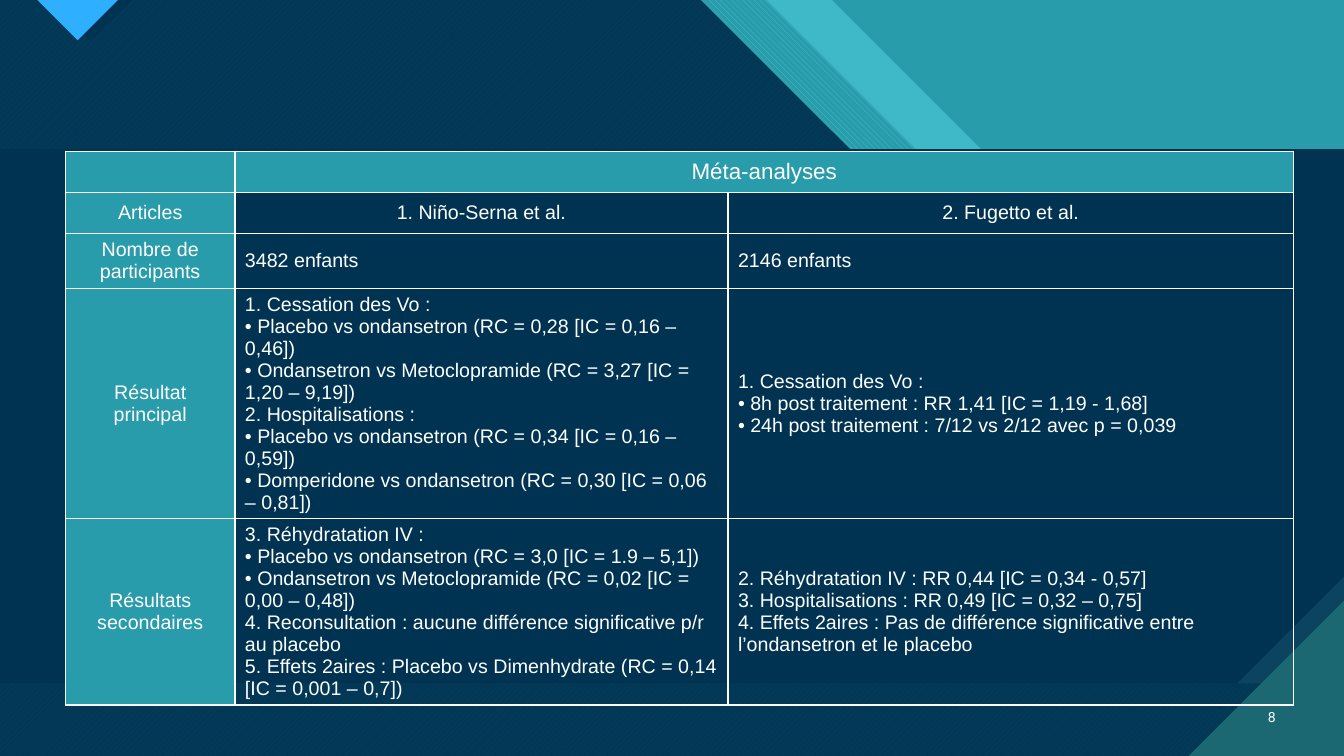
from dataclasses import dataclass

import lxml.etree
import pptx
import pptx.dml.color
import pptx.dml.fill
import pptx.enum.dml
import pptx.enum.shapes
import pptx.enum.text
import pptx.oxml.ns
import pptx.shapes.base
import pptx.slide
import pptx.table
import pptx.text.text
import pptx.util
from pptx.util import Inches

TEAL, AQUA, NAVY, WHITE = "299CAB", "47C3D3", "003352", "FFFFFF"
DEEP_TEAL, BAND_BLUE, BRIGHT_BLUE = "1B6872", "0C4360", "2FAFFF"
WIDTH, HEIGHT = 13.33, 7.5
BAND_TOP, BAND_HEIGHT = 1.48, 5.3

Pattern = pptx.enum.dml.MSO_PATTERN
Align = pptx.enum.text.PP_ALIGN
MIDDLE = pptx.enum.text.MSO_ANCHOR.MIDDLE


@dataclass
class Panel:
    points: list[tuple[float, float]]
    color: str
    back: str = ""
    pattern: Pattern | None = None
    opacity: int = 100


@dataclass
class Row:
    height: float
    label: str
    cells: list[list[str]]
    align: Align = Align.LEFT


def diagonal_outline(top: float, shelf: float, edge: float) -> list[tuple[float, float]]:
    """Outline left of a 45-degree cut that starts at top, rests on a shelf and meets the right edge."""
    step = 2.97
    return [(0, 0), (top, 0), (top + step, step), (shelf, step),
            (WIDTH, edge), (WIDTH, HEIGHT), (0, HEIGHT)]


NAVY_OUTLINE = diagonal_outline(6.95, 11.18, 5.12)
BACKDROP = [
    Panel(diagonal_outline(8.25, 12.34, 3.96), AQUA, opacity=74),
    Panel(diagonal_outline(7.6, 11.84, 4.47), AQUA, TEAL, Pattern.WIDE_DOWNWARD_DIAGONAL),
    Panel(NAVY_OUTLINE, AQUA, DEEP_TEAL, Pattern.WIDE_UPWARD_DIAGONAL),
    Panel(NAVY_OUTLINE, NAVY, opacity=90),
    Panel([(0.48, 0), (0.9, 0.41), (1.31, 0)], NAVY),
    Panel([(0.37, 0), (0.77, 0.4), (1.17, 0)], BRIGHT_BLUE),
]
CORNER = Panel([(11.79, HEIGHT), (WIDTH, HEIGHT), (WIDTH, 5.96)], DEEP_TEAL)

COLUMN_WIDTHS = [1.68, 4.89, 5.61]
HEADER_HEIGHT = 0.41
ROWS = [
    Row(0.41, "Articles", [["1. Niño-Serna et al."], ["2. Fugetto et al."]], Align.CENTER),
    Row(0.54, "Nombre de participants", [["3482 enfants"], ["2146 enfants"]]),
    Row(2.28, "Résultat principal", [
        ["1. Cessation des Vo :",
         "• Placebo vs ondansetron (RC = 0,28 [IC = 0,16 – 0,46])",
         "• Ondansetron vs Metoclopramide (RC = 3,27 [IC = 1,20 – 9,19])",
         "2. Hospitalisations :",
         "• Placebo vs ondansetron (RC = 0,34 [IC = 0,16 – 0,59])",
         "• Domperidone vs ondansetron (RC = 0,30 [IC = 0,06 – 0,81])"],
        ["1. Cessation des Vo :",
         "• 8h post traitement : RR 1,41 [IC = 1,19 - 1,68]",
         "• 24h post traitement : 7/12 vs 2/12 avec p = 0,039"]]),
    Row(1.85, "Résultats secondaires", [
        ["3. Réhydratation IV :",
         "• Placebo vs ondansetron (RC = 3,0 [IC = 1.9 – 5,1])",
         "• Ondansetron vs Metoclopramide (RC = 0,02 [IC = 0,00 – 0,48])",
         "4. Reconsultation : aucune différence significative p/r au placebo",
         "5. Effets 2aires : Placebo vs Dimenhydrate (RC = 0,14 [IC = 0,001 – 0,7])"],
        ["2. Réhydratation IV : RR 0,44 [IC = 0,34 - 0,57]",
         "3. Hospitalisations : RR 0,49 [IC = 0,32 – 0,75]",
         "4. Effets 2aires : Pas de différence significative entre l’ondansetron et le placebo"]]),
]


def rgb(color: str) -> pptx.dml.color.RGBColor:
    return pptx.dml.color.RGBColor.from_string(color)


def fill_solid(fill: pptx.dml.fill.FillFormat, color: str) -> None:
    fill.solid()
    fill.fore_color.rgb = rgb(color)


def clear_outline(shape: pptx.shapes.base.BaseShape) -> None:
    shape.shadow.inherit = False
    shape.line.fill.background()


def draw_panel(page: pptx.slide.Slide, panel: Panel) -> None:
    points = [(Inches(x), Inches(y)) for x, y in panel.points]
    builder = page.shapes.build_freeform(*points[0])
    builder.add_line_segments(points[1:], close=True)
    shape = builder.convert_to_shape()
    clear_outline(shape)
    if panel.pattern is not None:
        shape.fill.patterned()
        shape.fill.pattern = panel.pattern
        shape.fill.fore_color.rgb = rgb(panel.color)
        shape.fill.back_color.rgb = rgb(panel.back)
        return
    fill_solid(shape.fill, panel.color)
    if panel.opacity < 100:
        color = shape._element.spPr.find(".//" + pptx.oxml.ns.qn("a:srgbClr"))
        alpha = lxml.etree.SubElement(color, pptx.oxml.ns.qn("a:alpha"))
        alpha.set("val", str(panel.opacity * 1000))


def draw_band(page: pptx.slide.Slide, color: str, snip: float) -> None:
    """Full-width band whose lower right corner is cut off."""
    cut = snip * BAND_HEIGHT
    bottom = BAND_TOP + BAND_HEIGHT
    draw_panel(page, Panel([(0, BAND_TOP), (WIDTH, BAND_TOP), (WIDTH, bottom - cut),
                            (WIDTH - cut, bottom), (0, bottom)], color))


def write(frame: pptx.text.text.TextFrame, lines: list[str], align: Align,
          size: int, font: str = "Arial") -> None:
    font_format = {"name": font, "size": pptx.util.Pt(size), "bold": False}
    for index, line in enumerate(lines):
        para = frame.paragraphs[0] if index == 0 else frame.add_paragraph()
        para.alignment = align
        span = para.add_run()
        span.text = line
        for name, value in font_format.items():
            setattr(span.font, name, value)
        span.font.color.rgb = rgb(WHITE)


def style_cell(cell: pptx.table._Cell, color: str = "") -> None:
    """Anchor the cell, fill it if a colour is given, and rule its four sides in white."""
    cell.vertical_anchor = MIDDLE
    if color:
        fill_solid(cell.fill, color)
    else:
        cell.fill.background()
    properties = cell._tc.get_or_add_tcPr()
    for index, side in enumerate(["lnL", "lnR", "lnT", "lnB"]):
        properties.insert(index, pptx.oxml.parse_xml(
            f'<a:{side} {pptx.oxml.ns.nsdecls("a")} w="12700"><a:solidFill>'
            f'<a:srgbClr val="{WHITE}"/></a:solidFill></a:{side}>'))


def draw_results(page: pptx.slide.Slide) -> None:
    heights = [HEADER_HEIGHT] + [row.height for row in ROWS]
    table = page.shapes.add_table(
        len(heights), len(COLUMN_WIDTHS), Inches(0.65), Inches(1.5),
        Inches(sum(COLUMN_WIDTHS)), Inches(sum(heights))).table
    table.first_row = table.horz_banding = False
    for column, width in zip(table.columns, COLUMN_WIDTHS):
        column.width = Inches(width)
    for line, height in zip(table.rows, heights):
        line.height = Inches(height)

    for column in range(len(COLUMN_WIDTHS)):
        style_cell(table.cell(0, column), TEAL)
    table.cell(0, 1).merge(table.cell(0, 2))
    write(table.cell(0, 1).text_frame, ["Méta-analyses"], Align.CENTER, 16)

    for index, row in enumerate(ROWS, start=1):
        label = table.cell(index, 0)
        style_cell(label, TEAL)
        write(label.text_frame, [row.label], Align.CENTER, 14)
        for column, lines in enumerate(row.cells, start=1):
            cell = table.cell(index, column)
            style_cell(cell)
            write(cell.text_frame, lines, row.align, 14)


def draw_page_number(page: pptx.slide.Slide) -> None:
    box = page.shapes.add_textbox(Inches(12.31), Inches(6.91), Inches(0.44), Inches(0.4))
    box.text_frame.word_wrap = True
    box.text_frame.vertical_anchor = MIDDLE
    write(box.text_frame, ["8"], Align.RIGHT, 10, "Roboto")


def main() -> None:
    deck = pptx.Presentation()
    deck.slide_width, deck.slide_height = Inches(WIDTH), Inches(HEIGHT)
    page = deck.slides.add_slide(deck.slide_layouts[6])
    fill_solid(page.background.fill, TEAL)
    for panel in BACKDROP:
        draw_panel(page, panel)
    draw_band(page, BAND_BLUE, 0)
    draw_band(page, NAVY, 0.2)
    draw_panel(page, CORNER)
    draw_results(page)
    draw_page_number(page)
    deck.save("out.pptx")


if __name__ == "__main__":
    main()
